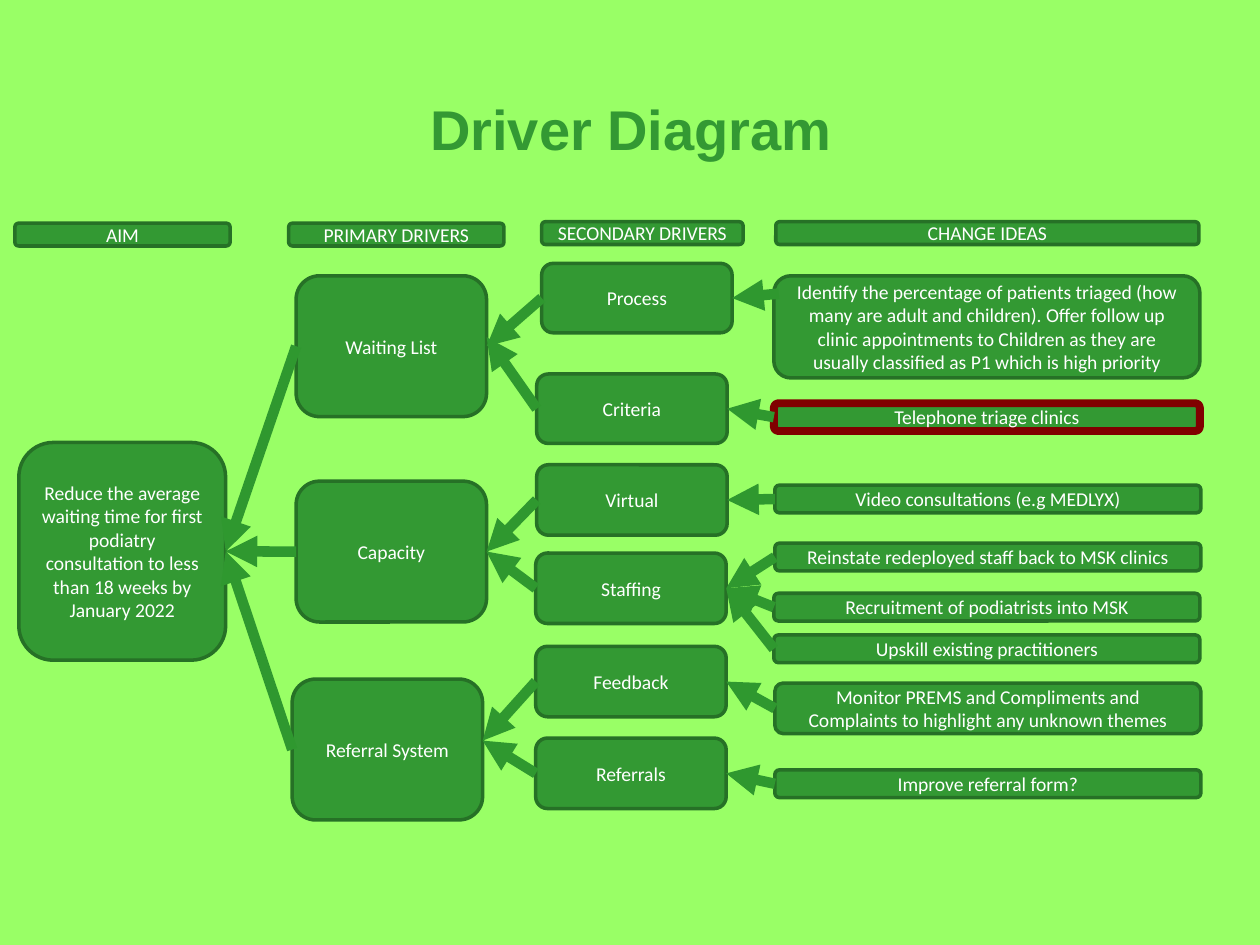
from dataclasses import dataclass

from lxml.etree import SubElement
from pptx import Presentation
from pptx.dml.color import RGBColor as RGB
from pptx.enum.shapes import MSO_CONNECTOR as CONN, MSO_SHAPE as SHAPE
from pptx.enum.text import MSO_ANCHOR as ANCHOR, PP_ALIGN as ALIGN
from pptx.oxml.ns import qn
from pptx.util import Cm, Pt


@dataclass(frozen=True)
class Theme:
    """Colours, fonts and sizes of the slide."""
    back: RGB = RGB(0x99, 0xFF, 0x66)
    green: RGB = RGB(0x33, 0x99, 0x33)
    edge: RGB = RGB(0x26, 0x71, 0x26)
    accent: RGB = RGB(0x80, 0x00, 0x00)
    arrow: RGB = RGB(0x2F, 0x98, 0x2F)
    text: RGB = RGB(0xFF, 0xFF, 0xFF)
    title_font: str = "Arial"
    body_font: str = "Calibri"
    title_size: float = 32
    body_size: float = 11.2
    edge_width: float = 2
    accent_width: float = 4.5
    arrow_width: float = 6


T = Theme()

HEADERS = [
    ("AIM", 0, 0.03, 4.34),
    ("PRIMARY DRIVERS", 5.52, 0.03, 4.34),
    ("SECONDARY DRIVERS", 10.62, 0, 4.06),
    ("CHANGE IDEAS", 15.34, 0, 8.53),
]
AIM = [("Reduce the average waiting time for first podiatry consultation "
        "to less than 18 weeks by January 2022", 0, 0, 4.39)]
PRIMARY = [
    ("Waiting List", 0.08, 0, 2.84),
    ("Capacity", 0.08, 4.14, 2.84),
    ("Referral System", 0, 8.13, 2.84),
]
SECONDARY = [
    ("Process", 0.12, 0, 1.4),
    ("Criteria", 0.02, 2.23, 1.4),
    ("Virtual", 0.02, 4.06, 1.42),
    ("Staffing", 0, 5.84, 1.42),
    ("Feedback", 0, 7.72, 1.42),
    ("Referrals", 0, 9.57, 1.42),
]
IDEAS = [
    ("Identify the percentage of patients triaged (how many are adult and "
     "children). Offer follow up clinic appointments to Children as they are "
     "usually classified as P1 which is high priority", 0, 0, 2.06),
    ("Telephone triage clinics", 0, 2.57, 0.56),
    ("Video consultations (e.g MEDLYX)", 0.02, 4.22, 0.56),
    ("Reinstate redeployed staff back to MSK clinics", 0.02, 5.39, 0.56),
    ("Recruitment of podiatrists into MSK", 0, 6.4, 0.56),
    ("Upskill existing practitioners", 0, 7.24, 0.56),
    ("Monitor PREMS and Compliments and Complaints to highlight any unknown "
     "themes", 0.02, 8.21, 1.02),
    ("Improve referral form?", 0.02, 9.96, 0.56),
]


def add_text(tf, text, font, size, color, bold=False):
    """Write one centred run in a text frame."""
    tf.word_wrap = True
    tf.vertical_anchor = ANCHOR.MIDDLE
    p = tf.paragraphs[0]
    p.alignment = ALIGN.CENTER
    r = p.add_run()
    r.text = text
    r.font.name, r.font.size, r.font.bold = font, Pt(size), bold
    r.font.color.rgb = color


def add_box(s, text, x, y, w, h):
    """Add one green rounded box and return it."""
    sp = s.shapes.add_shape(SHAPE.ROUNDED_RECTANGLE, Cm(x), Cm(y), Cm(w), Cm(h))
    sp.shadow.inherit = False
    sp.fill.solid()
    sp.fill.fore_color.rgb = T.green
    sp.line.color.rgb = T.edge
    sp.line.width = Pt(T.edge_width)
    add_text(sp.text_frame, text, T.body_font, T.body_size, T.text)
    return sp


def add_title(s, x, y, w, h):
    """Place and fill the title placeholder."""
    sp = s.shapes.title
    sp.left, sp.top, sp.width, sp.height = Cm(x), Cm(y), Cm(w), Cm(h)
    add_text(sp.text_frame, "Driver Diagram", T.title_font, T.title_size,
             T.green, True)


def add_headers(s, x, y, h):
    """Add the row of column headings."""
    for text, dx, dy, w in HEADERS:
        add_box(s, text, x + dx, y + dy, w, h)


def add_column(s, items, x, y, w):
    """Add a column of equally wide boxes and return them."""
    return [add_box(s, text, x + dx, y + dy, w, h) for text, dx, dy, h in items]


def add_arrow(s, start, end, start_shift=None, end_shift=0):
    """Point from the left side of one box to the right side of another."""
    dx, dy = start_shift or (0, 0)
    cn = s.shapes.add_connector(
        CONN.STRAIGHT,
        start.left + Cm(dx), start.top + start.height // 2 + Cm(dy),
        end.left + end.width, end.top + end.height // 2 + Cm(end_shift))
    if not start_shift:
        cn.begin_connect(start, 1)
    if not end_shift:
        cn.end_connect(end, 3)
    cn.line.color.rgb = T.arrow
    cn.line.width = Pt(T.arrow_width)
    SubElement(cn.line._get_or_add_ln(), qn("a:tailEnd"), type="triangle")
    SubElement(cn._element.spPr, qn("a:effectLst"))


def add_arrows(s, aim, primary, secondary, ideas):
    """Link every box to the one it drives."""
    for sp in primary:
        add_arrow(s, sp, aim)
    for i, (sp, shift) in enumerate(zip(secondary, (0, -0.18, 0, 0, -0.18, -0.18))):
        add_arrow(s, sp, primary[i // 2], end_shift=shift)
    add_arrow(s, ideas[0], secondary[0], start_shift=(0.1, -0.67))
    for sp, target in zip(ideas[1:], (1, 2, 3, 3, 3, 4, 5)):
        add_arrow(s, sp, secondary[target])


def main():
    """Build and save the driver diagram."""
    prs = Presentation()
    prs.slide_width, prs.slide_height = Cm(25.4), Cm(19.05)
    s = prs.slides.add_slide(prs.slide_layouts[5])
    s.background.fill.solid()
    s.background.fill.fore_color.rgb = T.back
    add_title(s, 6.63, 1.19, 12.19, 2.77)
    add_headers(s, 0.3, 4.47, 0.46)
    aim, = add_column(s, AIM, 0.38, 8.92, 4.17)
    primary = add_column(s, PRIMARY, 5.89, 5.56, 3.84)
    secondary = add_column(s, SECONDARY, 10.8, 5.31, 3.84)
    ideas = add_column(s, IDEAS, 15.6, 5.56, 8.59)
    ideas[1].line.color.rgb = T.accent
    ideas[1].line.width = Pt(T.accent_width)
    add_arrows(s, aim, primary, secondary, ideas)
    prs.save("out.pptx")


if __name__ == "__main__":
    main()
